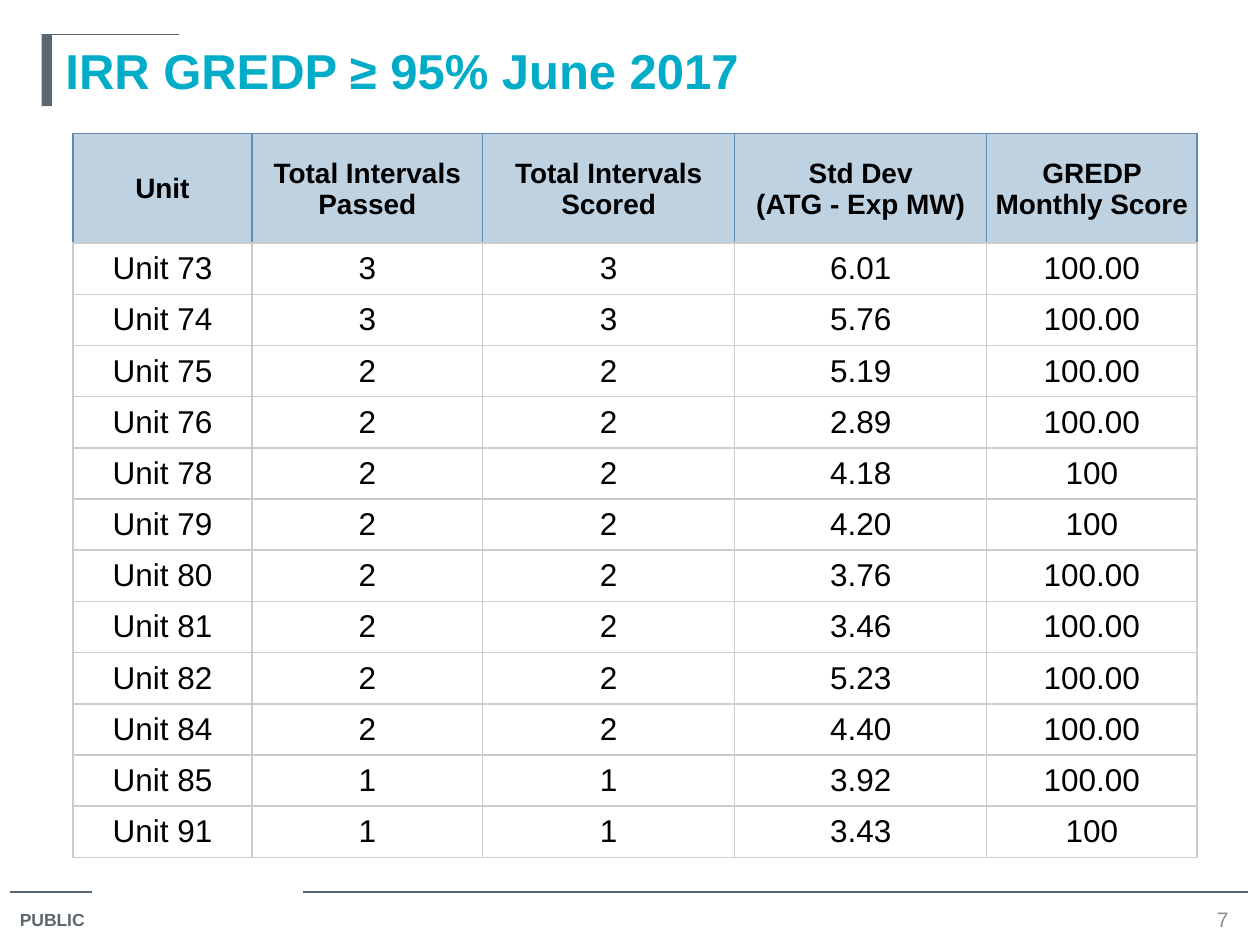
import pptx
import pptx.dml.color
import pptx.enum.shapes
import pptx.enum.text
import pptx.oxml
import pptx.oxml.ns
import pptx.util
from lxml import etree

Cm = pptx.util.Cm
Pt = pptx.util.Pt
ALIGN = pptx.enum.text.PP_ALIGN
ANCHOR = pptx.enum.text.MSO_ANCHOR

SLATE, TEAL, GREY, BLACK = "5B6770", "00ACC8", "8C8C8C", "000000"
HEADER_FILL, HEADER_EDGE, BODY_EDGE = "BFD2E2", "608BB4", "CCCCCC"

COLUMN_WIDTHS = [3.61, 4.65, 5.08, 5.08, 4.24]
HEADER_HEIGHT, TABLE_HEIGHT = 2.21, 14.6
HEADERS = ["Unit", "Total Intervals Passed", "Total Intervals Scored",
           "Std Dev\n(ATG - Exp MW)", "GREDP Monthly Score"]
UNITS = [
    ("Unit 73", "3", "3", "6.01", "100.00"),
    ("Unit 74", "3", "3", "5.76", "100.00"),
    ("Unit 75", "2", "2", "5.19", "100.00"),
    ("Unit 76", "2", "2", "2.89", "100.00"),
    ("Unit 78", "2", "2", "4.18", "100"),
    ("Unit 79", "2", "2", "4.20", "100"),
    ("Unit 80", "2", "2", "3.76", "100.00"),
    ("Unit 81", "2", "2", "3.46", "100.00"),
    ("Unit 82", "2", "2", "5.23", "100.00"),
    ("Unit 84", "2", "2", "4.40", "100.00"),
    ("Unit 85", "1", "1", "3.92", "100.00"),
    ("Unit 91", "1", "1", "3.43", "100"),
]


def color(code):
    return pptx.dml.color.RGBColor.from_string(code)


def apply(target, formats):
    for name, value in formats.items():
        setattr(target, name, value)


def write(frame, text, size, code, bold=False, align=ALIGN.LEFT):
    frame.text = text
    for para in frame.paragraphs:
        para.alignment = align
        for span in para.runs:
            apply(span.font, {"name": "Arial", "size": Pt(size), "bold": bold})
            span.font.color.rgb = color(code)


def add_text(page, place, text, size, code, bold=False, align=ALIGN.LEFT, **formats):
    box = page.shapes.add_textbox(*map(Cm, place))
    apply(box.text_frame, formats)
    write(box.text_frame, text, size, code, bold, align)


def add_rule(page, left, right, top):
    rule = page.shapes.add_connector(
        pptx.enum.shapes.MSO_CONNECTOR.STRAIGHT, Cm(left), Cm(top), Cm(right), Cm(top))
    rule.line.color.rgb = color(SLATE)
    rule.line.width = Pt(0.75)
    etree.SubElement(rule._element.spPr, pptx.oxml.ns.qn("a:effectLst"))


def add_bar(page, place):
    bar = page.shapes.add_shape(pptx.enum.shapes.MSO_SHAPE.RECTANGLE, *map(Cm, place))
    bar.shadow.inherit = False
    bar.fill.solid()
    bar.fill.fore_color.rgb = color(SLATE)
    bar.line.fill.background()


def add_borders(cell, edges):
    properties = cell._tc.get_or_add_tcPr()
    for side in "LRTB":
        properties.append(pptx.oxml.parse_xml(
            f'<a:ln{side} {pptx.oxml.ns.nsdecls("a")} w="{Pt(1)}"><a:solidFill>'
            f'<a:srgbClr val="{edges[side]}"/></a:solidFill></a:ln{side}>'))


def format_cell(cell, text, is_header):
    edge = HEADER_EDGE if is_header else BODY_EDGE
    margin = Cm(0.03 if is_header else 0)
    apply(cell, {"margin_left": margin, "margin_right": margin, "margin_top": margin,
                 "margin_bottom": 0, "vertical_anchor": ANCHOR.MIDDLE})
    add_borders(cell, {"L": edge, "R": edge, "T": edge, "B": BODY_EDGE})
    if is_header:
        cell.fill.solid()
        cell.fill.fore_color.rgb = color(HEADER_FILL)
    else:
        cell.fill.background()
    write(cell.text_frame, text, 16 if is_header else 18, BLACK, is_header, ALIGN.CENTER)


def add_score_table(page, left, top):
    rows = [HEADERS, *UNITS]
    table = page.shapes.add_table(
        len(rows), len(HEADERS), Cm(left), Cm(top),
        Cm(sum(COLUMN_WIDTHS)), Cm(TABLE_HEIGHT)).table
    apply(table, {"first_row": False, "horz_banding": False})
    for column, width in zip(table.columns, COLUMN_WIDTHS):
        column.width = Cm(width)
    unit_height = (TABLE_HEIGHT - HEADER_HEIGHT) / len(UNITS)
    for index, texts in enumerate(rows):
        is_header = index == 0
        table.rows[index].height = Cm(HEADER_HEIGHT if is_header else unit_height)
        for cell, text in zip(table.rows[index].cells, texts):
            format_cell(cell, text, is_header)


def main():
    deck = pptx.Presentation()
    apply(deck, {"slide_width": Cm(25.4), "slide_height": Cm(19.05)})
    page = deck.slides.add_slide(deck.slide_layouts[6])

    # Footer
    add_rule(page, 0.2, 1.85, 17.98)
    add_rule(page, 6.1, 25.15, 17.98)
    add_text(page, (0.15, 18.21, 1.96, 0.71), "PUBLIC", 10, SLATE, bold=True,
             word_wrap=False)
    add_text(page, (24.33, 18.24, 0.64, 0.58), "7", 12, GREY, align=ALIGN.CENTER,
             vertical_anchor=ANCHOR.MIDDLE, margin_left=0, margin_right=0)

    # Title with its corner mark
    add_bar(page, (0.84, 0.69, 0.21, 1.45))
    add_rule(page, 0.84, 3.61, 0.69)
    add_text(page, (1.07, 0.69, 23.5, 1.98), "IRR GREDP ≥ 95% June 2017", 28, TEAL,
             bold=True, word_wrap=True)

    # Scores by unit
    add_score_table(page, 1.47, 2.69)

    deck.save("out.pptx")


if __name__ == "__main__":
    main()
